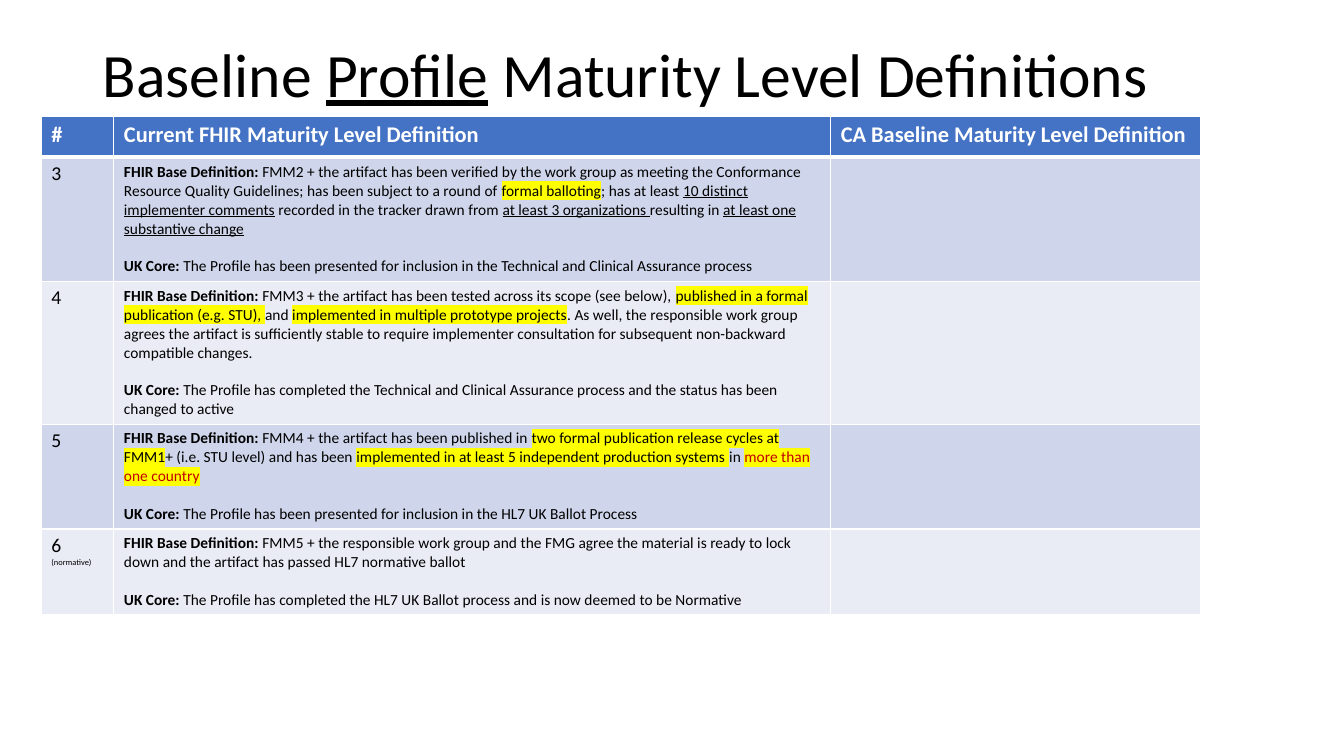
from lxml.etree import SubElement
from pptx import Presentation
from pptx.dml.color import RGBColor
from pptx.enum.text import MSO_ANCHOR, PP_ALIGN
from pptx.oxml import parse_xml
from pptx.oxml.ns import nsdecls, qn
from pptx.util import Inches, Pt

FONT = "Calibri"
BLACK, WHITE, RED, YELLOW = "000000", "FFFFFF", "C00000", "FFFF00"
HEADER_BLUE = "4472C4"
BAND_FILLS = ["CFD5EA", "E9EBF5"]
COLUMN_WIDTHS = [0.72, 7.11, 3.67]
ROW_HEIGHT = 0.41  # rows grow to fit their text
HEADINGS = ["#", "Current FHIR Maturity Level Definition",
            "CA Baseline Maturity Level Definition"]

# Span styles: "" plain, "bold", "underline", "mark" (yellow), "alert" (red on yellow)
LEVELS = [
    ([("3", "")],
     [("FMM2 + the artifact has been verified by the work group as meeting the "
       "Conformance Resource Quality Guidelines; has been subject to a round of ", ""),
      ("formal balloting", "mark"),
      ("; has at least ", ""),
      ("10 distinct implementer comments", "underline"),
      (" recorded in the tracker drawn from ", ""),
      ("at least 3 organizations ", "underline"),
      ("resulting in ", ""),
      ("at least one substantive change", "underline")],
     "The Profile has been presented for inclusion in the Technical and Clinical "
     "Assurance process"),
    ([("4", "")],
     [("FMM3 + the artifact has been tested across its scope (see below), ", ""),
      ("published in a formal publication (e.g. STU), ", "mark"),
      ("and ", ""),
      ("implemented in multiple prototype projects", "mark"),
      (". As well, the responsible work group agrees the artifact is sufficiently stable "
       "to require implementer consultation for subsequent non-backward compatible "
       "changes.", "")],
     "The Profile has completed the Technical and Clinical Assurance process and the "
     "status has been changed to active"),
    ([("5", "")],
     [("FMM4 + the artifact has been published in ", ""),
      ("two formal publication release cycles at FMM1", "mark"),
      ("+ (i.e. STU level) and has been ", ""),
      ("implemented in at least 5 independent production systems ", "mark"),
      ("in ", ""),
      ("more than one country", "alert")],
     "The Profile has been presented for inclusion in the HL7 UK Ballot Process"),
    ([("6 ", ""), ("(normative)", "small")],
     [("FMM5 + the responsible work group and the FMG agree the material is ready to "
       "lock down and the artifact has passed HL7 normative ballot", "")],
     "The Profile has completed the HL7 UK Ballot process and is now deemed to be "
     "Normative"),
]


def color(hex_value):
    return RGBColor.from_string(hex_value)


def add_span(para, text, style=""):
    span = para.add_run()
    span.text = text
    if style == "bold":
        span.font.bold = True
    elif style == "underline":
        span.font.underline = True
    elif style == "small":
        span.font.size = Pt(6)
    elif style in ("mark", "alert"):
        span.font.color.rgb = color(RED if style == "alert" else BLACK)
        highlight = SubElement(span.font._element, qn("a:highlight"))
        SubElement(highlight, qn("a:srgbClr")).set("val", YELLOW)


def write_paragraph(para, spans, size, hex_value=BLACK):
    para.font.name = FONT
    para.font.size = Pt(size)
    para.font.color.rgb = color(hex_value)
    for text, style in spans:
        add_span(para, text, style)


def style_cell(cell, fill, bottom_width=1):
    """Fill the cell and rule its four sides in white."""
    cell.fill.solid()
    cell.fill.fore_color.rgb = color(fill)
    properties = cell._tc.get_or_add_tcPr()
    for index, side in enumerate("LRTB"):
        width = Pt(bottom_width if side == "B" else 1)
        properties.insert(index, parse_xml(
            f'<a:ln{side} {nsdecls("a")} w="{width}"><a:solidFill>'
            f'<a:srgbClr val="{WHITE}"/></a:solidFill></a:ln{side}>'))


def place_title(page, left, top, width, height):
    title = page.shapes.title
    title.left, title.top = Inches(left), Inches(top)
    title.width, title.height = Inches(width), Inches(height)
    title.text_frame.vertical_anchor = MSO_ANCHOR.MIDDLE
    para = title.text_frame.paragraphs[0]
    para.alignment = PP_ALIGN.LEFT
    para.line_spacing = 0.9
    write_paragraph(para, [("Baseline ", ""), ("Profile", "underline"),
                           (" Maturity Level Definitions", "")], 44)


def place_levels_table(page, left, top, width, height):
    frame = page.shapes.add_table(len(LEVELS) + 1, len(HEADINGS), Inches(left),
                                  Inches(top), Inches(width), Inches(height))
    table = frame.table
    for column, column_width in zip(table.columns, COLUMN_WIDTHS):
        column.width = Inches(column_width)
    for row in table.rows:
        row.height = Inches(ROW_HEIGHT)
    frame.height = Inches(height)

    for cell, heading in zip(table.rows[0].cells, HEADINGS):
        style_cell(cell, HEADER_BLUE, bottom_width=3)
        write_paragraph(cell.text_frame.paragraphs[0], [(heading, "bold")], 16, WHITE)

    for index, (number, base, uk_core) in enumerate(LEVELS):
        cells = list(table.rows[index + 1].cells)
        for cell in cells:
            style_cell(cell, BAND_FILLS[index % 2])
        write_paragraph(cells[0].text_frame.paragraphs[0], number, 14)
        definition = cells[1].text_frame
        write_paragraph(definition.paragraphs[0],
                        [("FHIR Base Definition: ", "bold")] + base, 11)
        uk_para = definition.add_paragraph()
        uk_para.space_before = Pt(13.4)
        write_paragraph(uk_para, [("UK Core: ", "bold"), (uk_core, "")], 11)


def main():
    deck = Presentation()
    deck.slide_width, deck.slide_height = Inches(13.33), Inches(7.5)
    page = deck.slides.add_slide(deck.slide_layouts[5])
    place_title(page, 0.92, 0.04, 11.5, 1.45)
    place_levels_table(page, 0.41, 1.15, sum(COLUMN_WIDTHS), 4.84)
    deck.save("out.pptx")


if __name__ == "__main__":
    main()
